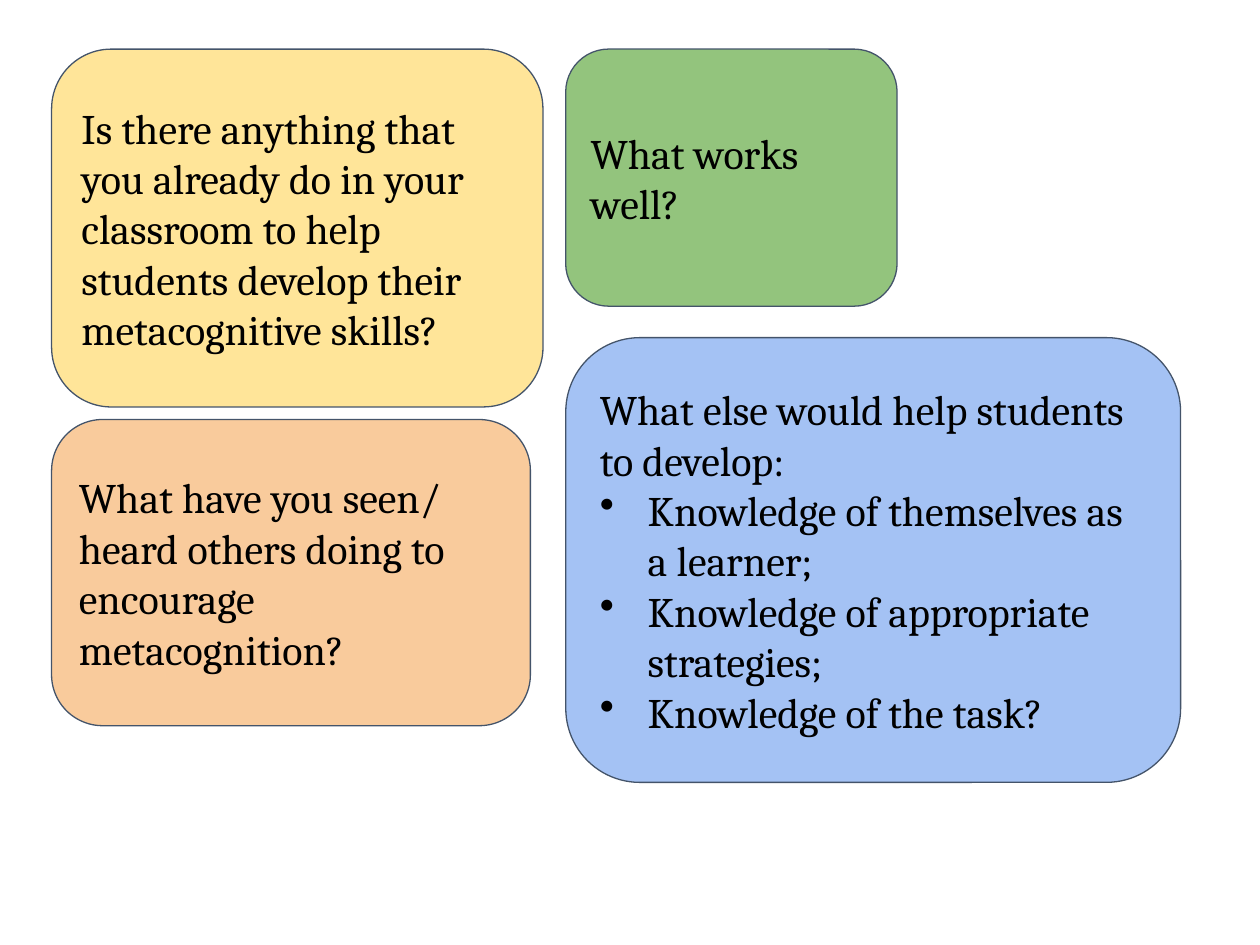
"""Build a slide of four rounded prompt cards about metacognition."""
from dataclasses import dataclass

from lxml.etree import SubElement
from pptx import Presentation
from pptx.dml.color import RGBColor
from pptx.enum.shapes import MSO_SHAPE as Shape
from pptx.enum.text import MSO_ANCHOR as Anchor, PP_ALIGN as Align
from pptx.oxml.ns import qn
from pptx.util import Emu, Pt

EMU_PER_PX = 9144


@dataclass(frozen=True)
class Theme:
    font: str = "Cambria"
    text_size: float = 24
    line_width: float = 0.75
    text: str = "000000"
    outline: str = "44546A"
    yellow: str = "FFE599"
    orange: str = "F9CB9C"
    green: str = "93C47D"
    blue: str = "A4C2F4"


@dataclass(frozen=True)
class Card:
    left: int
    top: int
    width: int
    height: int
    fill: str
    prompt: str
    bullets: tuple[str, ...] = ()


THEME = Theme()
LEFT_COLUMN, RIGHT_COLUMN, TOP_ROW = 41, 449, 39
INSET, BULLET_INDENT = 10, 38
CARDS = (
    Card(LEFT_COLUMN, TOP_ROW, 390, 284, THEME.yellow,
         "Is there anything that you already do in your classroom "
         "to help students develop their metacognitive skills?"),
    Card(LEFT_COLUMN, 333, 380, 243, THEME.orange,
         "What have you seen/ heard others doing to encourage metacognition?"),
    Card(RIGHT_COLUMN, TOP_ROW, 263, 204, THEME.green, "What works well?"),
    Card(RIGHT_COLUMN, 268, 488, 353, THEME.blue,
         "What else would help students to develop:",
         ("Knowledge of themselves as a learner;",
          "Knowledge of appropriate strategies;",
          "Knowledge of the task?")),
)


def px(length: int) -> Emu:
    return Emu(length * EMU_PER_PX)


def add_bullet(paragraph) -> None:
    properties = paragraph._p.get_or_add_pPr()
    properties.set("marL", str(px(BULLET_INDENT)))
    properties.set("indent", str(-px(BULLET_INDENT)))
    color = SubElement(properties, qn("a:buClr"))
    SubElement(color, qn("a:srgbClr"), val=THEME.text)
    SubElement(properties, qn("a:buChar"), char="•")


def write_paragraph(paragraph, text: str) -> None:
    paragraph.alignment = Align.LEFT
    run = paragraph.add_run()
    run.text = text
    run.font.name = THEME.font
    run.font.size = Pt(THEME.text_size)
    run.font.color.rgb = RGBColor.from_string(THEME.text)


def add_card(slide, card: Card) -> None:
    shape = slide.shapes.add_shape(
        Shape.ROUNDED_RECTANGLE,
        px(card.left), px(card.top), px(card.width), px(card.height))
    shape.shadow.inherit = False
    shape.fill.solid()
    shape.fill.fore_color.rgb = RGBColor.from_string(card.fill)
    shape.line.color.rgb = RGBColor.from_string(THEME.outline)
    shape.line.width = Pt(THEME.line_width)

    frame = shape.text_frame
    frame.word_wrap = True
    frame.vertical_anchor = Anchor.MIDDLE
    frame.margin_left = frame.margin_right = px(INSET)
    frame.margin_top = frame.margin_bottom = px(INSET)
    write_paragraph(frame.paragraphs[0], card.prompt)
    for bullet in card.bullets:
        paragraph = frame.add_paragraph()
        add_bullet(paragraph)
        write_paragraph(paragraph, bullet)


def main() -> None:
    presentation = Presentation()
    presentation.slide_width, presentation.slide_height = px(1000), px(750)
    slide = presentation.slides.add_slide(presentation.slide_layouts[6])
    for card in CARDS:
        add_card(slide, card)
    presentation.save("out.pptx")


if __name__ == "__main__":
    main()
